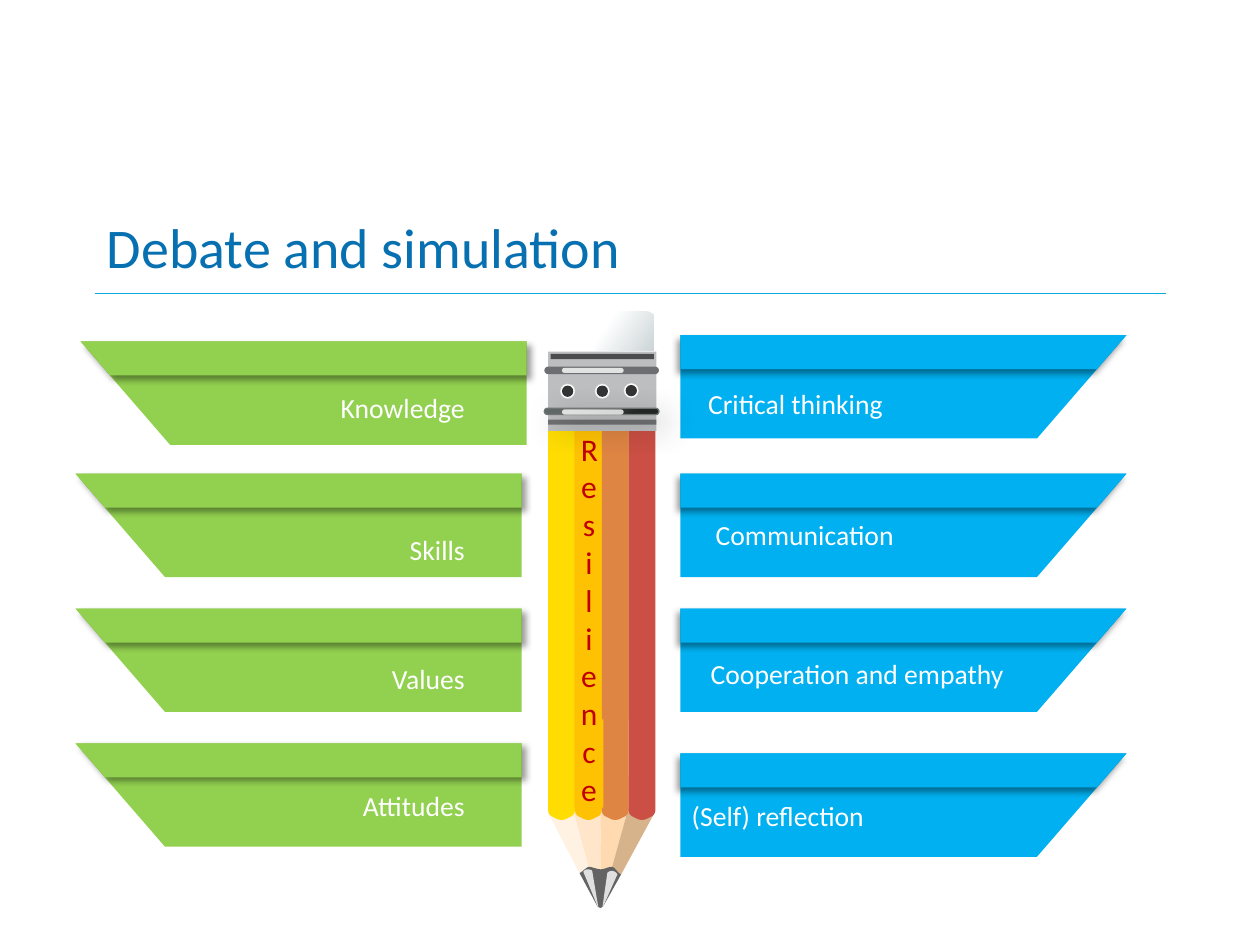
from lxml import etree
from pptx import Presentation
from pptx.dml.color import RGBColor
from pptx.enum.shapes import MSO_CONNECTOR, MSO_SHAPE
from pptx.enum.text import MSO_ANCHOR, PP_ALIGN
from pptx.oxml.ns import qn
from pptx.util import Inches, Pt

RECT, OVAL, ROUND = MSO_SHAPE.RECTANGLE, MSO_SHAPE.OVAL, MSO_SHAPE.ROUNDED_RECTANGLE
LEFT, CENTER, RIGHT = PP_ALIGN.LEFT, PP_ALIGN.CENTER, PP_ALIGN.RIGHT
TOP, MIDDLE = MSO_ANCHOR.TOP, MSO_ANCHOR.MIDDLE

THEME = {
    "font": "Calibri", "title_size": 32, "label_size": 15.8, "word_size": 18,
    "title": "0770B1", "rule": "0BA7DF", "label": "FFFFFF", "word": "C00000",
    "left": "92D050", "right": "00B0F0",
    "bars": ["FFDD03", "FFC203", "DF8544", "CB4F44"],
    "wood": ["FFF2E3", "FFE6CA", "FFDAB0", "D6B38B"],
    "lead": "636363", "metal": "BCBEC0", "groove": "6D6E71", "edge": "707473",
    "ring": "E6E7E8", "white": "FFFFFF", "black": "000000",
    "dark_band": ((0.24, "606867"), (0.79, "222625")),
    "eraser": ((0.23, "FFFFFF"), (1, "CDD5D8")),
}

# Content
W, H = 10, 7.5
TITLE = "Debate and simulation"
# label, banner outer edge, banner top, label top
LEFT_BANNERS = [("Knowledge", 0.64, 2.71, 3.06), ("Skills", 0.6, 3.76, 4.19),
                ("Values", 0.6, 4.83, 5.21), ("Attitudes", 0.6, 5.9, 6.22)]
# label, label left, banner top, label top
RIGHT_BANNERS = [("Critical thinking", 5.58, 2.66, 3.03), ("Communication", 5.64, 3.76, 4.07),
                 ("Cooperation and empathy", 5.6, 4.83, 5.17), ("(Self) reflection", 5.45, 5.98, 6.3)]
WORD = [["Res"], ["i", "l", "ience"]]  # paragraphs of lines; the narrow bar wraps the letters

# Banner and pencil grids
BANNER_W, BANNER_H, FOLD_H, SLANT = 3.54, 0.82, 0.27, 0.71
RIGHT_X = 5.4
PEN_X, BAR_W = 4.35, 0.213
WOOD_EDGES = [(4.35, 6.45), (4.48, 6.18), (4.76, 6.05), (5.05, 6.19), (5.19, 6.46)]
LEAD_EDGES = [(4.6, 6.93), (4.68, 6.91), (4.77, 6.9), (4.85, 6.91), (4.93, 6.94)]
GLINTS = [[(4.63, 6.92), (4.75, 7.21), (4.7, 6.91), (4.69, 6.9, 4.64, 6.89, 4.63, 6.92)],
          [(4.9, 6.94), (4.78, 7.21), (4.82, 6.93), (4.83, 6.91, 4.88, 6.9, 4.9, 6.94)]]
DOT_CENTERS = [(4.505, 3.105), (4.78, 3.105), (5.01, 3.1)]

prs = Presentation()
prs.slide_width, prs.slide_height = Inches(W), Inches(H)
s = prs.slides.add_slide(prs.slide_layouts[6])


def rgb(color):
    return RGBColor.from_string(color)


def add_shadow(sp, blur, dist, angle):
    effects = sp._element.spPr.find(qn("a:effectLst"))
    shadow = etree.SubElement(effects, qn("a:outerShdw"), blurRad=str(Pt(blur)), dist=str(Pt(dist)),
                              dir=str(angle * 60000), algn="ctr", rotWithShape="0")
    color = etree.SubElement(shadow, qn("a:srgbClr"), val=THEME["black"])
    etree.SubElement(color, qn("a:alpha"), val="40000")


def paint(sp, color, alpha=100):
    sp.shadow.inherit = False
    sp.line.fill.background()
    sp.fill.solid()
    sp.fill.fore_color.rgb = rgb(color)
    if alpha < 100:
        clr = sp._element.spPr.find(qn("a:solidFill"))[0]
        etree.SubElement(clr, qn("a:alpha"), val=str(alpha * 1000))
    return sp


def paint_gradient(sp, stops, angle):
    sp.fill.gradient()
    sp.fill.gradient_angle = 360 - angle
    for stop, (position, color) in zip(sp.fill.gradient_stops, stops):
        stop.position, stop.color.rgb = position, rgb(color)


def shape(kind, x, y, w, h, color, alpha=100):
    return paint(s.shapes.add_shape(kind, *map(Inches, (x, y, w, h))), color, alpha)


def outline(points, color, alpha=100):
    """Pairs are corners; six numbers are a Bezier curve from the point before."""
    path = [points[0]]
    for point in points[1:]:
        if len(point) == 2:
            path.append(point)
            continue
        ends = [path[-1], point[:2], point[2:4], point[4:]]
        for t in (k / 8 for k in range(1, 9)):
            weights = ((1 - t) ** 3, 3 * t * (1 - t) ** 2, 3 * t * t * (1 - t), t ** 3)
            path.append(tuple(sum(c * e[i] for c, e in zip(weights, ends)) for i in (0, 1)))
    path = [(round(x * 1000), round(y * 1000)) for x, y in path]
    builder = s.shapes.build_freeform(*path[0], scale=Inches(1) / 1000)
    builder.add_line_segments(path[1:], close=True)
    return paint(builder.convert_to_shape(), color, alpha)


def write(sp, paragraphs, size, color, align=LEFT, anchor=TOP, insets=(0.04,) * 4):
    tf = sp.text_frame
    tf.word_wrap, tf.vertical_anchor = True, anchor
    tf.margin_left, tf.margin_top, tf.margin_right, tf.margin_bottom = map(Inches, insets)
    for i, lines in enumerate(paragraphs):
        p = tf.add_paragraph() if i else tf.paragraphs[0]
        p.alignment = align
        for j, line in enumerate(lines):
            if j:
                p.add_line_break()
            r = p.add_run()
            r.text = line
            r.font.name, r.font.size, r.font.color.rgb = THEME["font"], Pt(size), rgb(color)


def textbox(text, x, y, w, h, size, color, **options):
    write(s.shapes.add_textbox(*map(Inches, (x, y, w, h))), [[text]], size, color, **options)


def banner(inner, outer, top, color, shadow_angle):
    toward = 1 if inner > outer else -1
    for height, folded in ((BANNER_H, False), (FOLD_H, True)):
        tip = outer + toward * SLANT * height / BANNER_H
        sp = outline([(inner, top), (outer, top), (tip, top + height), (inner, top + height)], color)
        if folded:
            add_shadow(sp, 4, 3, shadow_angle)


# Title and rule
rule = s.shapes.add_connector(MSO_CONNECTOR.STRAIGHT, *map(Inches, (0.75, 2.33, W - 0.75, 2.33)))
rule.line.color.rgb, rule.line.width = rgb(THEME["rule"]), Pt(0.75)
etree.SubElement(rule._element.spPr, qn("a:effectLst"))
textbox(TITLE, 0.75, 1.58, W - 1.5, 0.75, THEME["title_size"], THEME["title"],
        anchor=MIDDLE, insets=(0.1, 0.05, 0.1, 0.05))

# Banners and labels
for text, x, top, label_top in LEFT_BANNERS:
    banner(x + BANNER_W, x, top, THEME["left"], 45)
    textbox(text, 1.48, label_top, 2.5, 0.34, THEME["label_size"], THEME["label"],
            align=RIGHT, insets=(0.04, 0.04, 0.29, 0.04))
for text, x, top, label_top in RIGHT_BANNERS:
    banner(RIGHT_X, RIGHT_X + BANNER_W, top, THEME["right"], 129)
    textbox(text, x, label_top, 2.84, 0.34, THEME["label_size"], THEME["label"])

# Pencil point: wood facets, lead and glints
for i, color in enumerate(THEME["wood"]):
    outline([WOOD_EDGES[i], WOOD_EDGES[i + 1], LEAD_EDGES[i + 1], LEAD_EDGES[i]], color)
outline([(4.6, 6.93), (4.74, 7.19), (4.75, 7.21, 4.78, 7.21, 4.79, 7.19), (4.93, 6.94),
         (4.9, 6.93, 4.89, 6.89, 4.86, 6.88), (4.83, 6.88, 4.79, 6.9, 4.77, 6.9),
         (4.74, 6.9, 4.7, 6.88, 4.67, 6.88), (4.65, 6.89, 4.62, 6.92, 4.6, 6.93)], THEME["lead"])

# Pencil bars with scalloped ends, then the word on the second bar
for i, color in enumerate(THEME["bars"]):
    x = PEN_X + i * BAR_W
    end = x + BAR_W
    outline([(x, 2.86), (x, 6.42), (x, 6.45, x + 0.01, 6.47, x + 0.03, 6.48), (x + 0.07, 6.5),
             (x + 0.09, 6.51, end - 0.09, 6.51, end - 0.07, 6.5), (end - 0.03, 6.48),
             (end - 0.01, 6.47, end, 6.45, end, 6.42), (end, 2.86)], color)
word_bar = shape(RECT, 4.56, 3.41, 0.23, 3, THEME["bars"][1])
write(word_bar, WORD, THEME["word_size"], THEME["word"], CENTER, MIDDLE, (0.05,) * 4)
shape(RECT, PEN_X + 2 * BAR_W, 2.86, BAR_W, 2.85, THEME["bars"][2])
for glint in GLINTS:
    outline(glint, THEME["white"], 80)

# Ferrule: metal body, dark strips, grooves and highlights
shape(RECT, 4.35, 2.79, 0.86, 0.63, THEME["metal"])
shape(ROUND, 4.32, 2.91, 0.91, 0.06, THEME["groove"]).adjustments[0] = 0.5
shape(RECT, 4.37, 2.81, 0.82, 0.04, THEME["black"], 60)
shape(RECT, 4.35, 3.33, 0.86, 0.04, THEME["black"], 40)
band = shape(ROUND, 4.32, 3.24, 0.91, 0.05, THEME["groove"])
band.adjustments[0] = 0.5
paint_gradient(band, THEME["dark_band"], 59)
band.line.color.rgb, band.line.width = rgb(THEME["edge"]), Pt(0.75)
add_shadow(band, 19, 8, 45)
for y in (2.92, 3.25):
    shape(ROUND, 4.46, y, 0.49, 0.04, THEME["white"], 80).adjustments[0] = 0.5

# Rivets
for cx, cy in DOT_CENTERS:
    for size, color, alpha in ((0.12, THEME["ring"], 100), (0.11, THEME["white"], 100),
                               (0.09, THEME["black"], 80)):
        shape(OVAL, cx - size / 2, cy - size / 2, size, size, color, alpha)

# Eraser
eraser = outline([(5.09, 2.47), (4.82, 2.47), (4.77, 2.47, 4.73, 2.49, 4.73, 2.51), (4.73, 2.78),
                  (5.19, 2.78), (5.19, 2.51), (5.19, 2.49, 5.15, 2.47, 5.09, 2.47)], THEME["white"])
paint_gradient(eraser, THEME["eraser"], 35)

prs.save("out.pptx")
